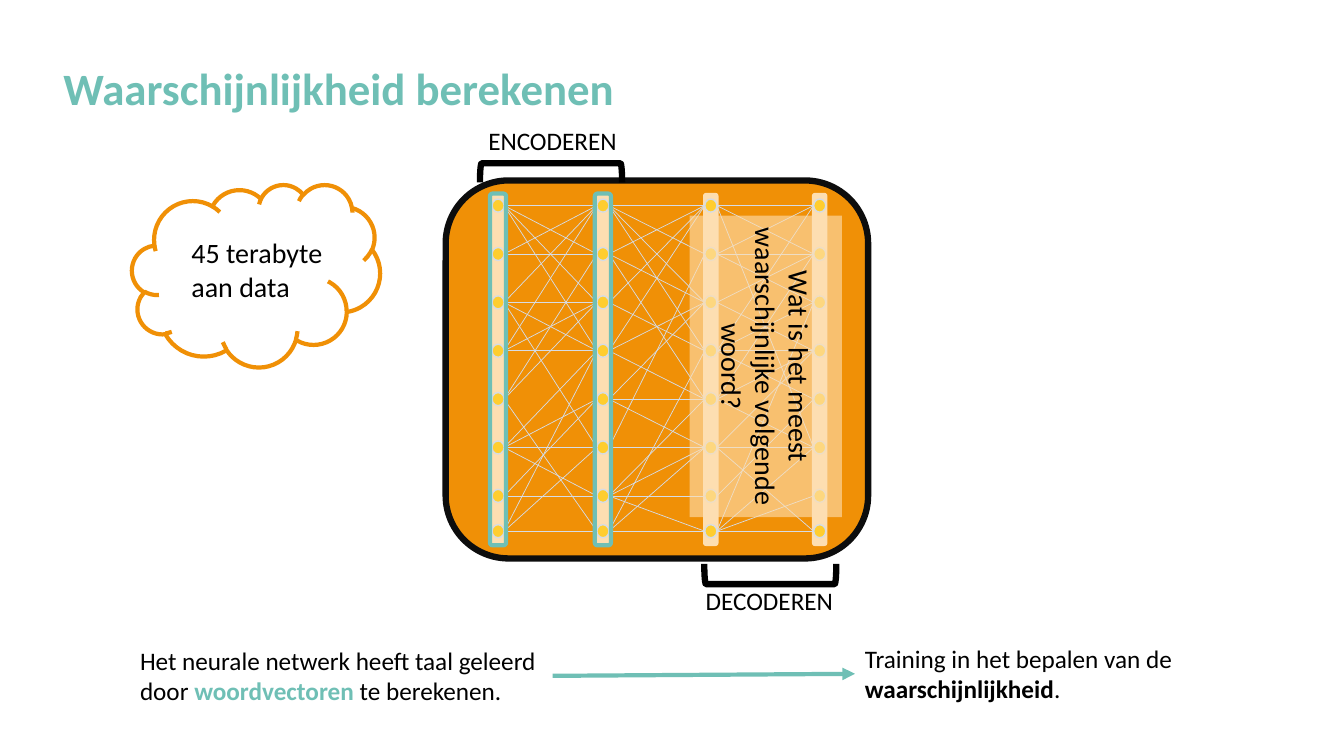
from lxml import etree
from pptx import Presentation
from pptx.dml.color import RGBColor
from pptx.enum.shapes import MSO_CONNECTOR as Link, MSO_SHAPE as Preset
from pptx.enum.text import MSO_ANCHOR as Anchor, MSO_AUTO_SIZE as Fit, PP_ALIGN as Align
from pptx.oxml.ns import qn
from pptx.util import Inches, Pt

TEAL = RGBColor(0x6F, 0xBF, 0xB5)
ORANGE = RGBColor(0xF0, 0x90, 0x06)
CREAM = RGBColor(0xFD, 0xDE, 0xB1)
YELLOW = RGBColor(0xFF, 0xCD, 0x2F)
GREY = RGBColor(0xD6, 0xDC, 0xE5)
NEAR_BLACK = RGBColor(0x0D, 0x0D, 0x0D)
BLACK = RGBColor(0x00, 0x00, 0x00)

# Network geometry: centre of each layer, height of each neuron
LAYER_X = [4.94, 5.98, 7.05, 8.13]
NEURON_Y = [2.04 + 0.48 * row for row in range(7)] + [5.27]
NEURON_W, NEURON_H = 0.12, 0.13
BAR_TOP, BAR_W, BAR_H = 1.92, 0.14, 3.49
FRAME_W = 0.16

# Per gap between layers: the rows that each left neuron reaches
LINKS = [
    [(0, 1, 2, 3), (0, 1), (0, 2, 3, 5), (0, 2, 3),
     (1, 2, 7), (3, 4, 5, 6), (4, 6), (3, 5, 7)],
    [(0, 1, 2, 3), (0, 2, 4), (0, 3), (0, 2, 4),
     (2, 4, 5), (1, 5), (4, 5, 6, 7), (3, 5, 7)],
    [(0, 1, 5), (0, 1, 2), (1, 3), (0, 2, 3, 4),
     (1, 3, 5), (3, 5, 7), (4,), (2, 5, 6, 7)],
]


class SlideBuilder:
    font = "Calibri"

    def __init__(self, slide):
        self.slide = slide

    def shape(self, preset, left, top, width, height, fill=None, line=None,
              weight=1, rotation=0, alpha=None):
        item = self.slide.shapes.add_shape(
            preset, Inches(left), Inches(top), Inches(width), Inches(height))
        item.shadow.inherit = False
        item.rotation = rotation
        if fill is None:
            item.fill.background()
        else:
            item.fill.solid()
            item.fill.fore_color.rgb = fill
        if alpha is not None:
            colour = item._element.spPr.find(qn("a:solidFill"))[0]
            etree.SubElement(colour, qn("a:alpha"), val=str(alpha * 1000))
        if line is None:
            item.line.fill.background()
        else:
            item.line.color.rgb = line
            item.line.width = Pt(weight)
        return item

    def add_runs(self, frame, runs, size, align=Align.LEFT):
        """Each run is (text, colour, bold)."""
        frame.word_wrap = True
        frame.vertical_anchor = Anchor.TOP
        paragraph = frame.paragraphs[0]
        paragraph.alignment = align
        for text, colour, bold in runs:
            run = paragraph.add_run()
            run.text = text
            run.font.name = self.font
            run.font.size = Pt(size)
            run.font.bold = bold
            run.font.color.rgb = colour

    def text(self, left, top, width, height, runs, size=18, align=Align.LEFT):
        box = self.slide.shapes.add_textbox(
            Inches(left), Inches(top), Inches(width), Inches(height))
        self.add_runs(box.text_frame, runs, size, align)
        box.text_frame.auto_size = Fit.SHAPE_TO_FIT_TEXT
        return box

    def line(self, x1, y1, x2, y2, colour, weight, arrow=False):
        link = self.slide.shapes.add_connector(
            Link.STRAIGHT, Inches(x1), Inches(y1), Inches(x2), Inches(y2))
        link.line.color.rgb = colour
        link.line.width = Pt(weight)
        if arrow:
            outline = link._element.spPr.find(qn("a:ln"))
            etree.SubElement(outline, qn("a:tailEnd"), type="triangle")
        etree.SubElement(link._element.spPr, qn("a:effectLst"))
        return link


def draw_network(builder):
    builder.shape(Preset.ROUNDED_RECTANGLE, 4.42, 1.79, 4.19, 3.75, ORANGE, NEAR_BLACK, 4.5)

    # Layer bars
    for x in LAYER_X:
        builder.shape(Preset.ROUNDED_RECTANGLE, x - BAR_W / 2, BAR_TOP,
                      BAR_W, BAR_H, CREAM, CREAM)

    # Links between neighbouring layers
    for x1, x2, reached in zip(LAYER_X, LAYER_X[1:], LINKS):
        for y1, targets in zip(NEURON_Y, reached):
            for target in targets:
                builder.line(x1 + NEURON_W / 2, y1, x2 - NEURON_W / 2,
                             NEURON_Y[target], GREY, 0.5)

    # Neurons
    for x in LAYER_X:
        for y in NEURON_Y:
            builder.shape(Preset.OVAL, x - NEURON_W / 2, y - NEURON_H / 2,
                          NEURON_W, NEURON_H, YELLOW, GREY)

    # Frames around the encoding layers
    for x in LAYER_X[:2]:
        builder.shape(Preset.ROUNDED_RECTANGLE, x - FRAME_W / 2, BAR_TOP,
                      FRAME_W, BAR_H, line=TEAL, weight=3)


def main():
    deck = Presentation()
    deck.slide_width, deck.slide_height = Inches(13.33), Inches(7.5)
    builder = SlideBuilder(deck.slides.add_slide(deck.slide_layouts[6]))

    # Title
    builder.text(0.53, 0.55, 11.97, 0.64, [("Waarschijnlijkheid berekenen", TEAL, True)], 32)

    draw_network(builder)

    # Encoding and decoding brackets
    builder.shape(Preset.LEFT_BRACKET, 5.37, 1.01, 0.19, 1.41,
                  line=BLACK, weight=4.5, rotation=90)
    builder.shape(Preset.LEFT_BRACKET, 7.54, 5.04, 0.2, 1.31,
                  line=BLACK, weight=4.5, rotation=270)
    for left, top, label in [(4.64, 1.19, "ENCODEREN"), (6.79, 5.76, "DECODEREN")]:
        builder.text(left, top, 1.68, 0.4, [(label, BLACK, False)], align=Align.CENTER)

    # From learning to training
    learning = builder.text(1.29, 6.35, 4.19, 0.71, [
        ("Het neurale netwerk heeft taal geleerd door ", BLACK, False),
        ("woordvectoren", TEAL, True),
        (" te berekenen.", BLACK, False)])
    training = builder.text(8.48, 6.33, 4.32, 0.71, [
        ("Training in het bepalen van de ", BLACK, False),
        ("waarschijnlijkheid", BLACK, True),
        (".", BLACK, False)])
    step = builder.line(5.48, 6.7, 8.48, 6.68, TEAL, 3, arrow=True)
    step.begin_connect(learning, 3)
    step.end_connect(training, 1)

    # Data cloud
    builder.shape(Preset.CLOUD, 1.31, 1.83, 2.46, 1.81, line=ORANGE, weight=3)
    builder.text(1.8, 2.29, 1.96, 0.77, [("45 terabyte aan data", BLACK, False)], 20)

    # Question over the decoding layers
    question = builder.shape(Preset.RECTANGLE, 6.1, 2.88, 2.99, 1.51, CREAM,
                             rotation=90, alpha=62)
    builder.add_runs(question.text_frame,
                     [("Wat is het meest waarschijnlijke volgende woord?", BLACK, False)],
                     20, Align.CENTER)
    question.text_frame.margin_top = Inches(0.25)

    deck.save("out.pptx")


if __name__ == "__main__":
    main()
